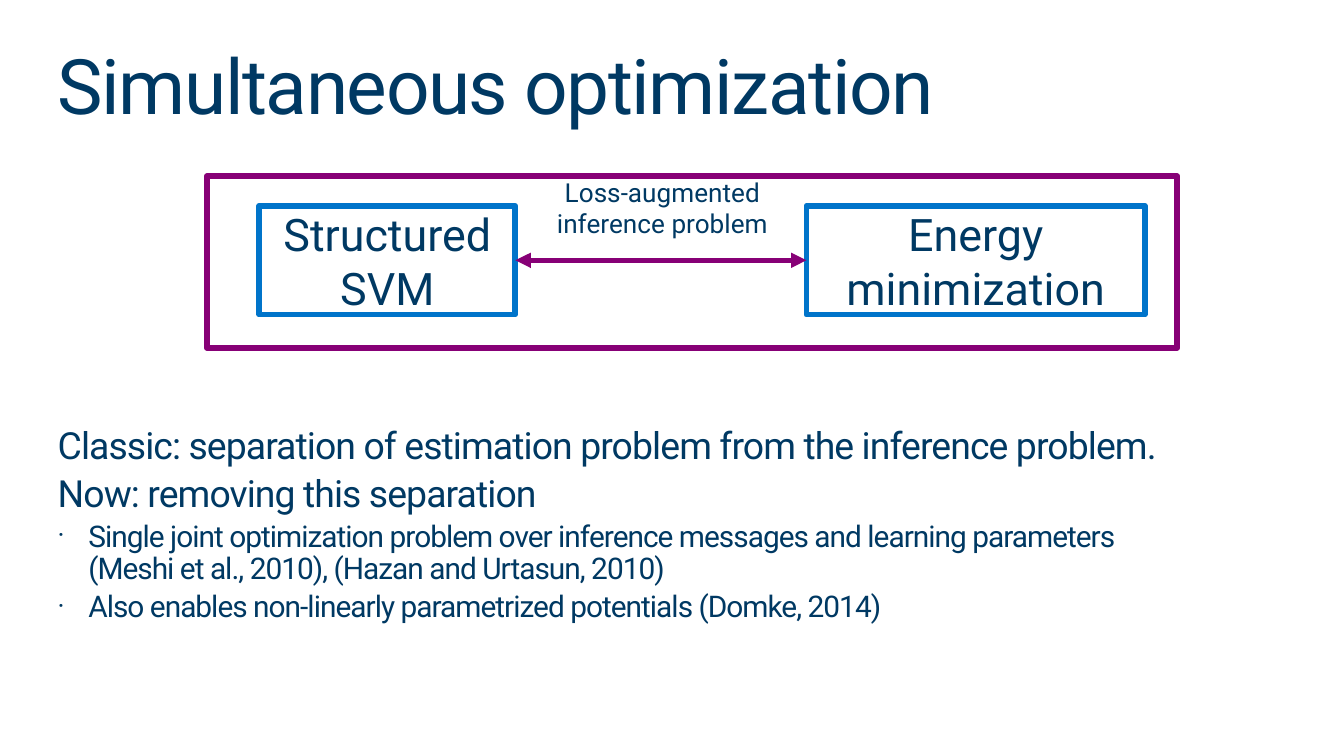
from copy import deepcopy

from pptx import Presentation
from pptx.dml.color import RGBColor
from pptx.enum.shapes import MSO_CONNECTOR as Connector, MSO_SHAPE as Shape
from pptx.enum.text import MSO_ANCHOR as Anchor, PP_ALIGN as Align
from pptx.oxml.ns import qn
from pptx.util import Cm, Pt
from lxml.etree import SubElement

NAVY = RGBColor(0x00, 0x39, 0x63)
BLUE = RGBColor(0x00, 0x74, 0xCA)
PURPLE = RGBColor(0x87, 0x00, 0x76)

FONT = "Roboto"
MARGIN = 1.09
CONTENT_WIDTH = 23.24
BOX_TOP, BOX_HEIGHT = 3.89, 2.06
BULLET_INDENT = Cm(0.58)

STATEMENTS = [
    "Classic: separation of estimation problem from the inference problem.",
    "Now: removing this separation",
]
BULLETS = [
    "Single joint optimization problem over inference messages and learning parameters\n"
    "(Meshi et al., 2010), (Hazan and Urtasun, 2010)",
    "Also enables non-linearly parametrized potentials (Domke, 2014)",
]


def set_attributes(target, values):
    for name, value in values.items():
        setattr(target, name, value)


def prepare_frame(shape, anchor):
    frame = shape.text_frame
    set_attributes(frame, {
        "word_wrap": True, "vertical_anchor": anchor,
        "margin_left": 0, "margin_right": 0, "margin_top": 0, "margin_bottom": 0,
    })
    return frame


def add_text_box(slide, left, top, width, height):
    shape = slide.shapes.add_textbox(Cm(left), Cm(top), Cm(width), Cm(height))
    return prepare_frame(shape, Anchor.TOP)


def write_paragraph(paragraph, text, size, tracking=0, **layout):
    """Fill a paragraph; tracking is the letter spacing in points."""
    paragraph.text = text
    set_attributes(paragraph, layout)
    for run in paragraph.runs:
        set_attributes(run.font, {"name": FONT, "size": Pt(size)})
        run.font.color.rgb = NAVY
        if tracking:
            run.font._element.set("spc", str(round(tracking * 100)))
    for line_break in paragraph._p.findall(qn("a:br")):
        line_break.append(deepcopy(paragraph.runs[0].font._element))


def add_bullet(paragraph):
    properties = paragraph._p.get_or_add_pPr()
    properties.set("marL", str(BULLET_INDENT))
    properties.set("indent", str(-BULLET_INDENT))
    SubElement(properties, qn("a:buSzPct"), val="90000")
    SubElement(properties, qn("a:buFont"), typeface=FONT)
    SubElement(properties, qn("a:buChar"), char="·")


def style_line(line, color, width):
    line.color.rgb = color
    line.width = Pt(width)
    SubElement(line._get_or_add_ln(), qn("a:round"))


def add_outline(slide, left, top, width, height, color):
    shape = slide.shapes.add_shape(
        Shape.RECTANGLE, Cm(left), Cm(top), Cm(width), Cm(height))
    shape.shadow.inherit = False
    shape.fill.background()
    style_line(shape.line, color, 3)
    return shape


def add_labelled_box(slide, left, width, text):
    shape = add_outline(slide, left, BOX_TOP, width, BOX_HEIGHT, BLUE)
    frame = prepare_frame(shape, Anchor.MIDDLE)
    frame.text = text
    for paragraph in frame.paragraphs:
        write_paragraph(paragraph, paragraph.text, 24, alignment=Align.CENTER)


def add_double_arrow(slide, start, end, height):
    connector = slide.shapes.add_connector(
        Connector.STRAIGHT, Cm(start), Cm(height), Cm(end), Cm(height))
    style_line(connector.line, PURPLE, 2.75)
    for tag in ("a:headEnd", "a:tailEnd"):
        SubElement(connector.line._get_or_add_ln(), qn(tag), type="triangle")
    SubElement(connector._element.spPr, qn("a:effectLst"))


def add_title(slide, text):
    frame = add_text_box(slide, MARGIN, 0.91, CONTENT_WIDTH, 1.57)
    write_paragraph(frame.paragraphs[0], text, 41, -0.8, line_spacing=0.9)


def add_body(slide):
    frame = add_text_box(slide, MARGIN, 8.08, CONTENT_WIDTH, 3.84)
    entries = [(text, 20) for text in STATEMENTS] + [(text, 16) for text in BULLETS]
    for index, (text, size) in enumerate(entries):
        paragraph = frame.add_paragraph() if index else frame.paragraphs[0]
        write_paragraph(paragraph, text, size, -0.5,
                        line_spacing=0.9, space_before=Pt(size * 0.2))
        if text in BULLETS:
            add_bullet(paragraph)


def add_diagram(slide):
    add_labelled_box(slide, 4.9, 4.84, "Structured SVM")
    add_labelled_box(slide, 15.24, 6.4, "Energy\nminimization")
    add_double_arrow(slide, 9.74, 15.24, BOX_TOP + BOX_HEIGHT / 2)
    label = add_text_box(slide, 10.21, 3.33, 4.62, 1.19)
    write_paragraph(label.paragraphs[0], "Loss-augmented inference problem", 14,
                    alignment=Align.CENTER)
    add_outline(slide, 3.91, 3.33, 18.34, 3.25, PURPLE)


def main():
    presentation = Presentation()
    presentation.slide_width = Cm(25.4)
    presentation.slide_height = Cm(14.29)
    slide = presentation.slides.add_slide(presentation.slide_layouts[6])
    add_title(slide, "Simultaneous optimization")
    add_body(slide)
    add_diagram(slide)
    presentation.save("out.pptx")


if __name__ == "__main__":
    main()
